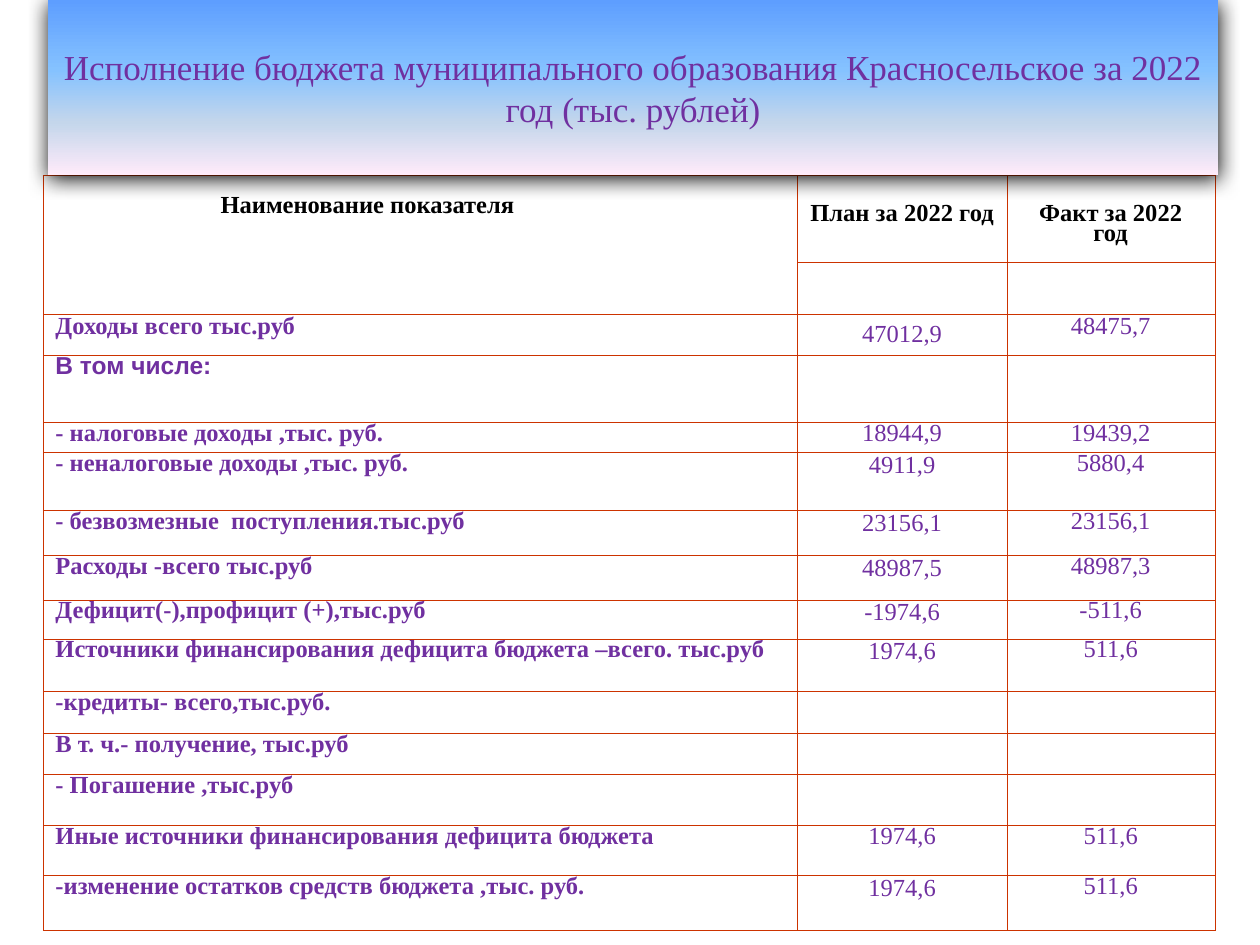
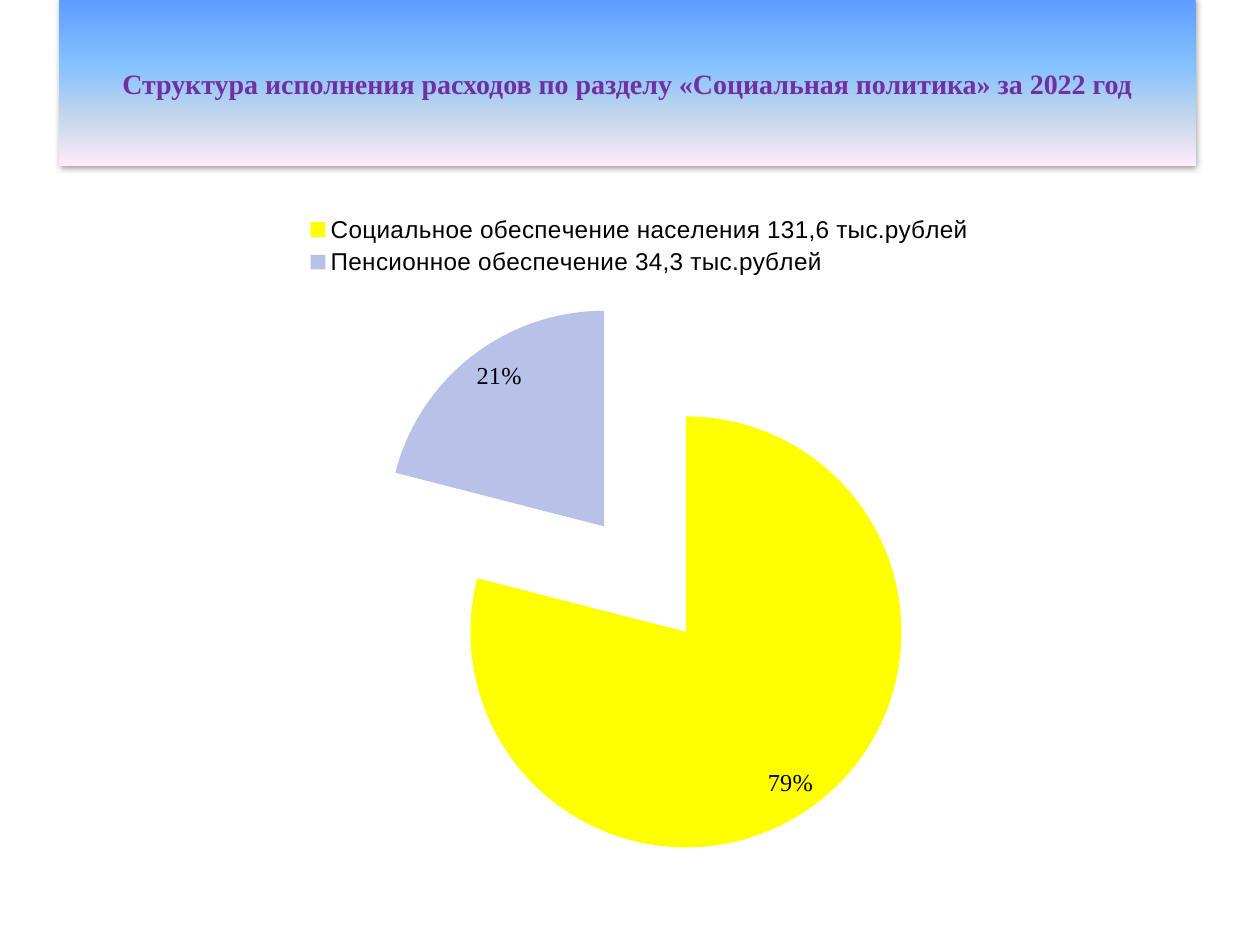
"""Build two budget slides: an execution table and a pie of social spending."""
from lxml.etree import SubElement
from pptx import Presentation
from pptx.chart.data import CategoryChartData
from pptx.dml.color import RGBColor
from pptx.enum.chart import XL_CHART_TYPE, XL_LABEL_POSITION, XL_LEGEND_POSITION
from pptx.enum.text import MSO_ANCHOR, MSO_AUTO_SIZE, PP_ALIGN
from pptx.oxml import parse_xml
from pptx.oxml.ns import nsdecls, qn
from pptx.util import Inches, Pt

PURPLE = RGBColor(0x70, 0x30, 0xA0)
BLACK = RGBColor(0, 0, 0)
WHITE = RGBColor(255, 255, 255)
RUST = RGBColor(0xCC, 0x33, 0x00)
YELLOW = RGBColor(255, 255, 0)
LAVENDER = RGBColor(0xB8, 0xC2, 0xE9)
BAND_STOPS = [(0, RGBColor(0x5E, 0x9E, 0xFF)), (40, RGBColor(0x85, 0xC2, 0xFF)),
              (70, RGBColor(0xC4, 0xD6, 0xEB)), (100, RGBColor(0xFF, 0xEB, 0xFA))]
SERIF, SANS = "Times New Roman", "Arial"

BUDGET_BAND = {
    "text": "Исполнение бюджета муниципального образования Красносельское за 2022 год (тыс. рублей)",
    "place": (0.38, 0, 9.29, 1.39), "size": 20, "bold": False,
    "shadow": {"alpha": 93, "blur": 12, "distance": 2}}
SOCIAL_BAND = {
    "text": "Структура исполнения расходов по разделу «Социальная политика» за 2022 год",
    "place": (0.47, 0, 9.02, 1.32), "size": 16, "bold": True,
    "shadow": {"alpha": 43, "blur": 4, "distance": 0}}

HEADERS = ("Наименование показателя", "План за 2022 год", "Факт за 2022 год")
INDICATORS = [
    ("Доходы всего тыс.руб", "47012,9", "48475,7"),
    ("В том числе:", "", ""),
    ("- налоговые доходы ,тыс. руб.", "18944,9", "19439,2"),
    ("- неналоговые доходы ,тыс. руб.", "4911,9", "5880,4"),
    ("- безвозмезные  поступления.тыс.руб", "23156,1", "23156,1"),
    ("Расходы -всего тыс.руб", "48987,5", "48987,3"),
    ("Дефицит(-),профицит (+),тыс.руб", "-1974,6", "-511,6"),
    ("Источники финансирования дефицита бюджета –всего. тыс.руб", "1974,6", "511,6"),
    ("-кредиты- всего,тыс.руб.", "", ""),
    ("В т. ч.- получение, тыс.руб", "", ""),
    ("- Погашение ,тыс.руб", "", ""),
    ("Иные источники финансирования дефицита бюджета", "1974,6", "511,6"),
    ("-изменение остатков средств бюджета ,тыс. руб.", "1974,6", "511,6"),
]
TABLE_ROWS = [HEADERS, ("", "", "")] + INDICATORS
COLUMN_WIDTHS = (5.99, 1.66, 1.65)
ROW_HEIGHTS = (0.69, 0.41, 0.33, 0.53, 0.24, 0.46, 0.36, 0.35,
               0.31, 0.42, 0.3, 0.33, 0.4, 0.4, 0.44)
TABLE_CORNER = (0.34, 1.39)
TOTAL_ROW = 2
TIGHT_PLAN_ROWS = (4, 13)
TIGHT, LOOSE = 0.66, 0.74
CELL_INSETS = {"margin_left": 0.1, "margin_top": 0.04, "margin_right": 0.1, "margin_bottom": 0.05}
SPECIAL_INSETS = {(0, 0): {"margin_left": 1.41, "margin_top": 0.18},
                  (0, 1): {"margin_top": 0.24}, (0, 2): {"margin_top": 0.24},
                  (TOTAL_ROW, 1): {"margin_top": 0.1}}

CHART_PLACE = (1.12, 1.6, 7.92, 5.4)
PLOT_SHARES = {"x": 0.22, "y": 0.14, "w": 0.57, "h": 0.83}
EXPLOSION = 31
SHARES = [("Социальное обеспечение населения 131,6 тыс.рублей", 79, YELLOW),
          ("Пенсионное обеспечение 34,3 тыс.рублей", 21, LAVENDER)]


def set_font(font, color=BLACK, **values):
    """Apply a dict of font values and a colour."""
    for name, value in values.items():
        setattr(font, name, value)
    font.color.rgb = color


def add_band_title(page, band):
    """Turn the title placeholder into a gradient band above the content."""
    title = page.shapes.title
    title.left, title.top, title.width, title.height = map(Inches, band["place"])
    stops = "".join(f'<a:gs pos="{share * 1000}"><a:srgbClr val="{color}"/></a:gs>'
                    for share, color in BAND_STOPS)
    shadow = band["shadow"]
    properties = title._element.spPr
    properties.append(parse_xml(
        f'<a:gradFill {nsdecls("a")} rotWithShape="1"><a:gsLst>{stops}</a:gsLst>'
        '<a:lin ang="5400000" scaled="0"/></a:gradFill>'))
    properties.append(parse_xml(
        f'<a:effectLst {nsdecls("a")}><a:outerShdw blurRad="{Pt(shadow["blur"])}" '
        f'dist="{Pt(shadow["distance"])}" dir="5400000" rotWithShape="0">'
        f'<a:srgbClr val="{BLACK}"><a:alpha val="{shadow["alpha"] * 1000}"/></a:srgbClr>'
        '</a:outerShdw></a:effectLst>'))
    frame = title.text_frame
    frame.text = band["text"]
    for name, value in {"word_wrap": True, "auto_size": MSO_AUTO_SIZE.NONE,
                        "vertical_anchor": MSO_ANCHOR.MIDDLE}.items():
        setattr(frame, name, value)
    para = frame.paragraphs[0]
    para.alignment = PP_ALIGN.CENTER
    set_font(para.runs[0].font, PURPLE, name=SERIF, size=Pt(band["size"]), bold=band["bold"])
    page.shapes._spTree.append(title._element)


def set_borders(cell):
    """Draw a hairline on each side of a cell."""
    properties = cell._tc.get_or_add_tcPr()
    for position, side in enumerate(("lnL", "lnR", "lnT", "lnB")):
        properties.insert(position, parse_xml(
            f'<a:{side} {nsdecls("a")} w="{Pt(0.06)}"><a:solidFill>'
            f'<a:srgbClr val="{RUST}"/></a:solidFill></a:{side}>'))


def fill_cell(cell, text, row, column):
    """Write and format one table cell."""
    cell.fill.solid()
    cell.fill.fore_color.rgb = WHITE
    set_borders(cell)
    for name, value in {**CELL_INSETS, **SPECIAL_INSETS.get((row, column), {})}.items():
        setattr(cell, name, Inches(value))
    loose = row <= TOTAL_ROW or (column == 1 and row not in TIGHT_PLAN_ROWS)
    para = cell.text_frame.paragraphs[0]
    para.line_spacing = LOOSE if loose else TIGHT
    para.alignment = PP_ALIGN.CENTER if column else PP_ALIGN.LEFT
    para.font.size = Pt(14)
    if text:
        span = para.add_run()
        span.text = text
        set_font(span.font, PURPLE if row else BLACK, size=Pt(14),
                 name=SANS if text == "В том числе:" else SERIF,
                 bold=row == 0 or column == 0)
    else:
        mark = SubElement(para._p, qn("a:endParaRPr"))
        mark.set("sz", "1400")


def add_budget_table(page):
    """Add the table of planned and actual figures."""
    size = (sum(COLUMN_WIDTHS), sum(ROW_HEIGHTS))
    table = page.shapes.add_table(len(TABLE_ROWS), len(COLUMN_WIDTHS),
                                  *map(Inches, TABLE_CORNER + size)).table
    table.first_row = table.horz_banding = False
    for column, width in zip(table.columns, COLUMN_WIDTHS):
        column.width = Inches(width)
    for row, height in zip(table.rows, ROW_HEIGHTS):
        row.height = Inches(height)
    for row, texts in enumerate(TABLE_ROWS):
        for column, text in enumerate(texts):
            fill_cell(table.cell(row, column), text, row, column)
    table.cell(0, 0).merge(table.cell(1, 0))


def add_social_pie(page):
    """Add the exploded pie with its legend on top."""
    data = CategoryChartData()
    data.categories = [name for name, _, _ in SHARES]
    data.add_series("Series 1", [value for _, value, _ in SHARES])
    chart = page.shapes.add_chart(XL_CHART_TYPE.PIE, *map(Inches, CHART_PLACE), data).chart
    chart.has_title = False
    set_font(chart.font, name="Calibri", size=Pt(15.7))
    chart.has_legend = True
    chart.legend.position = XL_LEGEND_POSITION.TOP
    chart.legend.include_in_layout = False
    set_font(chart.legend.font, name=SANS, size=Pt(13.9))

    plot = chart.plots[0]
    plot.vary_by_categories = True
    series = plot.series[0]
    for index, (_, _, color) in enumerate(SHARES):
        slice_format = series.points[index].format
        slice_format.fill.solid()
        slice_format.fill.fore_color.rgb = color
        slice_format.line.fill.background()
    series._element.find(qn("c:dPt")).addprevious(
        parse_xml(f'<c:explosion {nsdecls("c")} val="{EXPLOSION}"/>'))

    labels = series.data_labels
    for name, value in {"show_percentage": True, "show_value": False, "number_format": "0%",
                        "number_format_is_linked": False,
                        "position": XL_LABEL_POSITION.INSIDE_END}.items():
        setattr(labels, name, value)
    set_font(labels.font, name=SERIF, size=Pt(13.9))

    area = chart._chartSpace.chart.plotArea
    for old_layout in area.findall(qn("c:layout")):
        area.remove(old_layout)
    shares = "".join(f'<c:{key} val="{value}"/>' for key, value in PLOT_SHARES.items())
    area.insert(0, parse_xml(
        f'<c:layout {nsdecls("c")}><c:manualLayout><c:layoutTarget val="inner"/>'
        f'<c:xMode val="edge"/><c:yMode val="edge"/>{shares}</c:manualLayout></c:layout>'))


def main():
    """Build and save the deck."""
    deck = Presentation()
    deck.slide_width, deck.slide_height = Inches(10), Inches(7.5)
    for add_content, band in ((add_budget_table, BUDGET_BAND), (add_social_pie, SOCIAL_BAND)):
        page = deck.slides.add_slide(deck.slide_layouts[5])
        add_content(page)
        add_band_title(page, band)
    deck.save("out.pptx")


if __name__ == "__main__":
    main()
